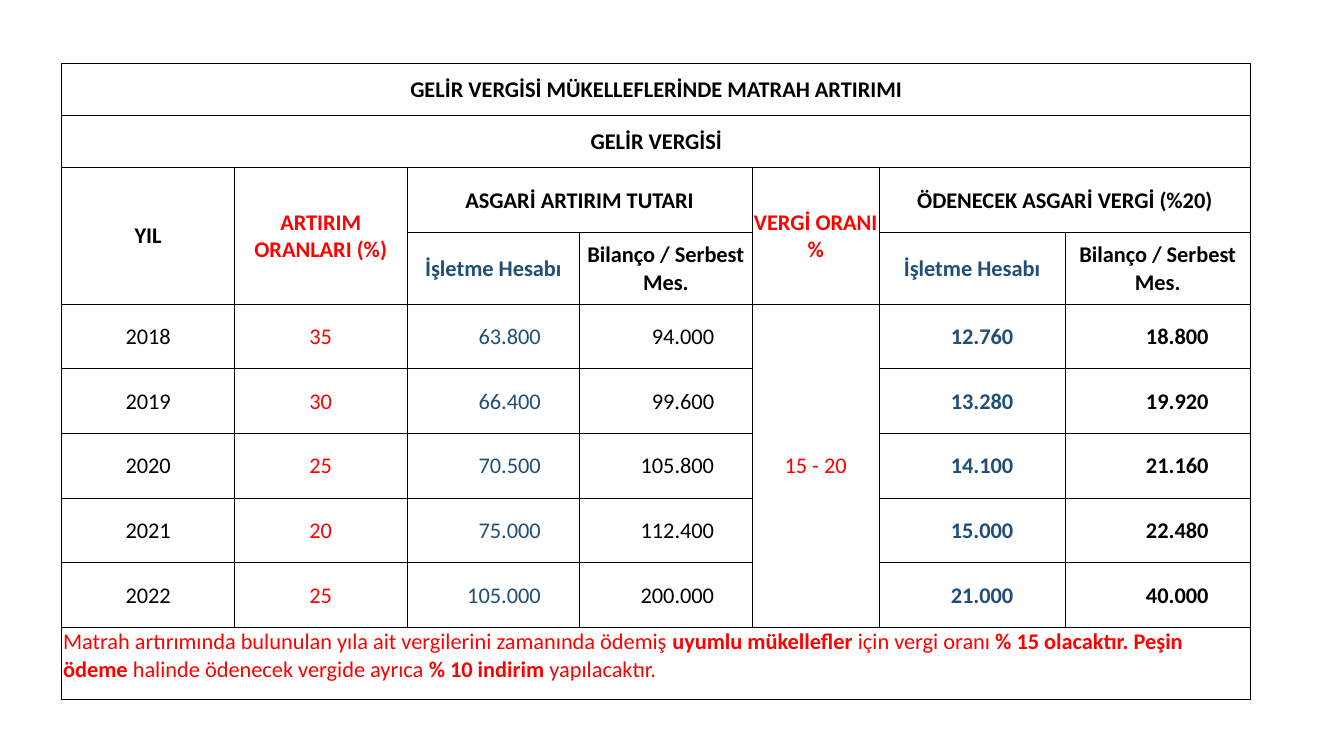
"""Build a slide with the income tax base increase table."""
from dataclasses import dataclass

from lxml.etree import SubElement
from pptx import Presentation
from pptx.dml.color import RGBColor
from pptx.enum.text import MSO_ANCHOR as Anchor, PP_ALIGN as Align
from pptx.oxml.ns import qn
from pptx.table import Table, _Cell as Cell
from pptx.util import Cm, Pt

BLACK = RGBColor(0x00, 0x00, 0x00)
RED = RGBColor(0xFF, 0x00, 0x00)
NAVY = RGBColor(0x1F, 0x4E, 0x78)

FONT, FONT_SIZE = "Calibri", Pt(16)
INNER_LINE, OUTER_LINE = Pt(0.5), Pt(1)
CELL_MARGIN = 0.03
COLUMN_WIDTHS = [4.35] * 4 + [3.2] + [4.68] * 2
ROW_HEIGHTS = [1.31, 1.31, 1.63, 1.81] + [1.63] * 5 + [1.81]
FIRST_YEAR_ROW = 4


@dataclass(frozen=True)
class Entry:
    row: int
    column: int
    text: str
    color: RGBColor = BLACK
    bold: bool = True
    row_span: int = 1
    column_span: int = 1
    align: Align = Align.CENTER
    margin_right: float = CELL_MARGIN


@dataclass(frozen=True)
class YearColumn:
    column: int
    values: tuple[str, ...]
    color: RGBColor = BLACK
    bold: bool = False
    align: Align = Align.CENTER
    margin_right: float = CELL_MARGIN


HEADINGS = [
    Entry(0, 0, "GELİR VERGİSİ MÜKELLEFLERİNDE MATRAH ARTIRIMI", column_span=7),
    Entry(1, 0, "GELİR VERGİSİ", column_span=7),
    Entry(2, 0, "YIL", row_span=2),
    Entry(2, 1, "ARTIRIM ORANLARI (%)", RED, row_span=2),
    Entry(2, 2, "ASGARİ ARTIRIM TUTARI", column_span=2),
    Entry(2, 4, "VERGİ ORANI %", RED, row_span=2),
    Entry(2, 5, "ÖDENECEK ASGARİ VERGİ (%20)", column_span=2),
    Entry(4, 4, "15 - 20", RED, bold=False, row_span=5),
]
for first_column in (2, 5):
    HEADINGS += [
        Entry(3, first_column, "İşletme Hesabı", NAVY),
        Entry(3, first_column + 1, "Bilanço / Serbest Mes."),
    ]

YEAR_COLUMNS = [
    YearColumn(0, ("2018", "2019", "2020", "2021", "2022")),
    YearColumn(1, ("35", "30", "25", "20", "25"), RED),
    YearColumn(2, ("63.800", "66.400", "70.500", "75.000", "105.000"),
               NAVY, False, Align.RIGHT, 0.98),
    YearColumn(3, ("94.000", "99.600", "105.800", "112.400", "200.000"),
               BLACK, False, Align.RIGHT, 0.96),
    YearColumn(5, ("12.760", "13.280", "14.100", "15.000", "21.000"),
               NAVY, True, Align.RIGHT, 1.3),
    YearColumn(6, ("18.800", "19.920", "21.160", "22.480", "40.000"),
               BLACK, True, Align.RIGHT, 1.06),
]

NOTE = [
    ("Matrah artırımında bulunulan yıla ait vergilerini zamanında ödemiş ", False),
    ("uyumlu mükellefler", True),
    (" için vergi oranı ", False),
    ("% 15 olacaktır. Peşin ödeme", True),
    (" halinde ödenecek vergide ayrıca ", False),
    ("% 10 indirim", True),
    (" yapılacaktır.", False),
]


def format_font(font, color: RGBColor, bold: bool) -> None:
    """Apply the table typeface with the given colour and weight."""
    font.name, font.size, font.bold = FONT, FONT_SIZE, bold
    font.color.rgb = color


def style_cell(cell: Cell, row: int, column: int) -> None:
    """Set margins, borders and an empty fill on one cell."""
    cell.margin_left = cell.margin_right = cell.margin_top = Cm(CELL_MARGIN)
    cell.margin_bottom = 0
    properties = cell._tc.get_or_add_tcPr()
    outer_sides = {
        "a:lnL": column == 0,
        "a:lnR": column == len(COLUMN_WIDTHS) - 1,
        "a:lnT": row == 0,
        "a:lnB": row == len(ROW_HEIGHTS) - 1,
    }
    for side, is_outer in outer_sides.items():
        width = OUTER_LINE if is_outer else INNER_LINE
        line = SubElement(properties, qn(side), w=str(int(width)))
        fill = SubElement(line, qn("a:solidFill"))
        SubElement(fill, qn("a:srgbClr"), val=str(BLACK))
    cell.fill.background()


def write_entry(table: Table, entry: Entry) -> None:
    """Merge where needed and write one formatted entry."""
    cell = table.cell(entry.row, entry.column)
    if entry.row_span * entry.column_span > 1:
        cell.merge(table.cell(entry.row + entry.row_span - 1,
                              entry.column + entry.column_span - 1))
    cell.vertical_anchor = Anchor.MIDDLE
    cell.margin_right = Cm(entry.margin_right)
    cell.text_frame.text = entry.text
    paragraph = cell.text_frame.paragraphs[0]
    paragraph.alignment = entry.align
    format_font(paragraph.runs[0].font, entry.color, entry.bold)


def write_note(table: Table) -> None:
    """Write the closing note across the last row."""
    last_row = len(ROW_HEIGHTS) - 1
    cell = table.cell(last_row, 0)
    cell.merge(table.cell(last_row, len(COLUMN_WIDTHS) - 1))
    paragraph = cell.text_frame.paragraphs[0]
    for text, bold in NOTE:
        run = paragraph.add_run()
        run.text = text
        format_font(run.font, RED, bold)


def add_tax_table(slide) -> None:
    """Add the whole tax table to the slide."""
    table = slide.shapes.add_table(
        len(ROW_HEIGHTS), len(COLUMN_WIDTHS), Cm(1.56), Cm(1.6),
        Cm(sum(COLUMN_WIDTHS)), Cm(sum(ROW_HEIGHTS))).table
    table.first_row = table.horz_banding = False
    for column, width in zip(table.columns, COLUMN_WIDTHS):
        column.width = Cm(width)
    for row_index, (row, height) in enumerate(zip(table.rows, ROW_HEIGHTS)):
        row.height = Cm(height)
        for column_index, cell in enumerate(row.cells):
            style_cell(cell, row_index, column_index)
    for heading in HEADINGS:
        write_entry(table, heading)
    for series in YEAR_COLUMNS:
        for row_index, value in enumerate(series.values, FIRST_YEAR_ROW):
            write_entry(table, Entry(
                row_index, series.column, value, series.color, series.bold,
                align=series.align, margin_right=series.margin_right))
    write_note(table)


def main() -> None:
    """Create and save the presentation."""
    presentation = Presentation()
    presentation.slide_width, presentation.slide_height = Cm(33.87), Cm(19.05)
    slide = presentation.slides.add_slide(presentation.slide_layouts[6])
    add_tax_table(slide)
    presentation.save("out.pptx")


if __name__ == "__main__":
    main()
